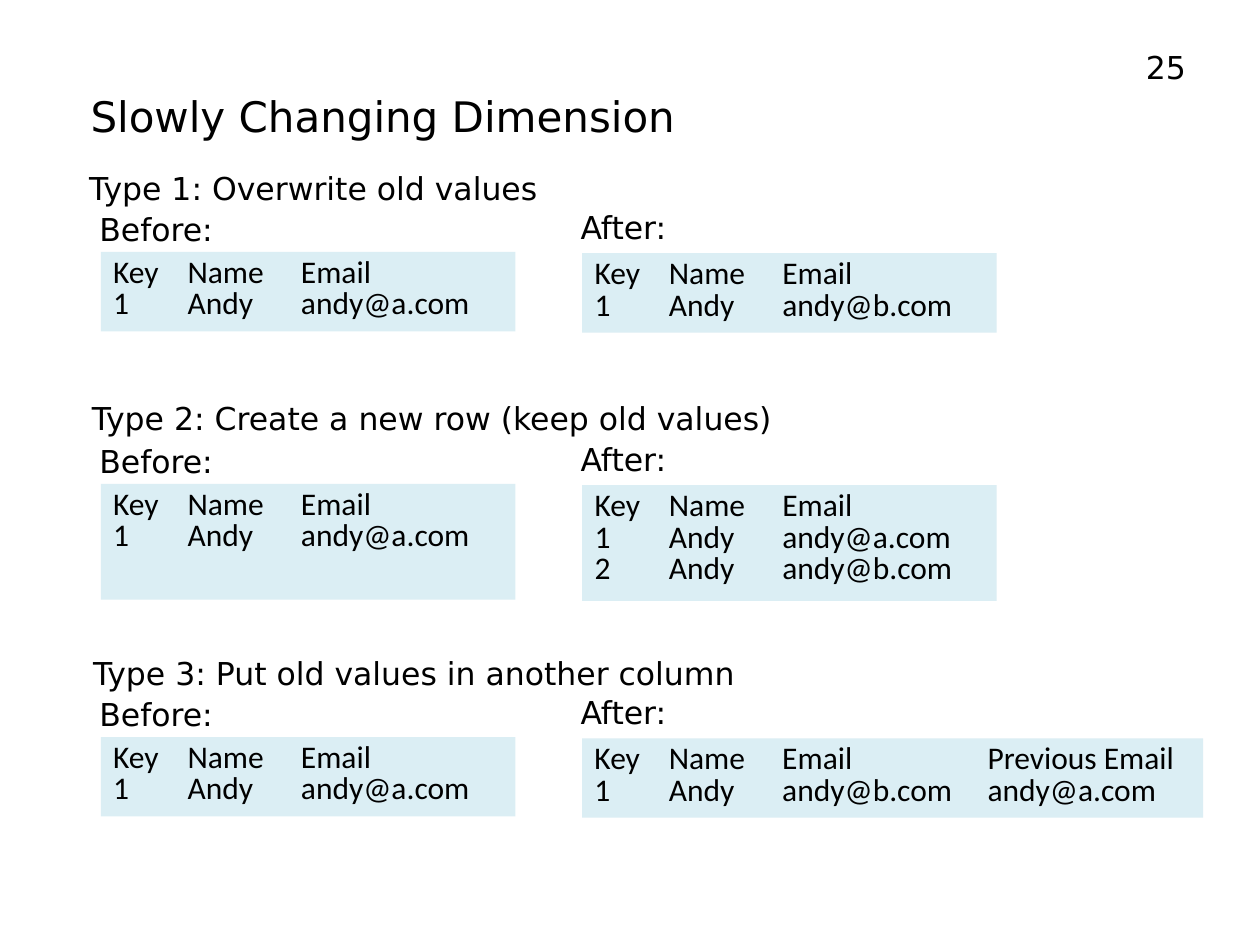
from pptx import Presentation
from pptx.dml.color import RGBColor
from pptx.enum.shapes import MSO_SHAPE
from pptx.enum.text import MSO_ANCHOR, PP_ALIGN
from pptx.oxml.ns import qn
from pptx.util import Inches, Pt
from lxml import etree

RECT = MSO_SHAPE.RECTANGLE
TOP, MIDDLE = MSO_ANCHOR.TOP, MSO_ANCHOR.MIDDLE
LEFT, RIGHT = PP_ALIGN.LEFT, PP_ALIGN.RIGHT
BLACK = RGBColor(0, 0, 0)
PALE = RGBColor(0xDB, 0xEE, 0xF4)
STOPS = (0.59, 1.49, 3.12)

prs = Presentation()
prs.slide_width, prs.slide_height = Inches(10), Inches(7.5)
slide = prs.slides.add_slide(prs.slide_layouts[6])


def add_text(text, x, y, w, h=0.4, size=18):
    box = slide.shapes.add_textbox(Inches(x), Inches(y), Inches(w), Inches(h))
    frame = box.text_frame
    frame.word_wrap = True
    frame.text = text
    font = frame.paragraphs[0].runs[0].font
    font.name, font.size, font.color.rgb = "DejaVu Sans", Pt(size), BLACK
    return frame


def add_panel(rows, x, y, w, h):
    panel = slide.shapes.add_shape(RECT, Inches(x), Inches(y), Inches(w), Inches(h))
    panel.shadow.inherit = False
    panel.fill.solid()
    panel.fill.fore_color.rgb = PALE
    panel.line.fill.background()
    frame = panel.text_frame
    frame.vertical_anchor = TOP
    frame.text = "\n".join("\t".join(row) for row in rows)
    for para in frame.paragraphs:
        para.alignment = LEFT
        para.line_spacing = Pt(18)
        # Tab stops line up the columns
        tabs = etree.SubElement(para._p.get_or_add_pPr(), qn("a:tabLst"))
        for stop in STOPS:
            etree.SubElement(tabs, qn("a:tab"), pos=str(Inches(stop)), algn="l")
        for run in para.runs:
            font = run.font
            font.name, font.size, font.color.rgb = "Calibri", Pt(18), BLACK


# Title and page number
title = add_text("Slowly Changing Dimension", 0.62, 0.47, 5.88, 0.72, 24)
title.paragraphs[0].line_spacing = 1.5
page = add_text("25", 8.7, 0.33, 0.81)
page.vertical_anchor = MIDDLE
page.paragraphs[0].alignment = RIGHT

# Records shown in the panels
HEAD = ("Key", "Name", "Email")
OLD = ("1", "Andy", "andy@a.com")
NEW = ("1", "Andy", "andy@b.com")
ADDED = ("2", "Andy", "andy@b.com")

# Heading, heading place, label top, panel height, after width, after rows
types = [
    ("Type 1: Overwrite old values", 0.61, 1.29, 1.62, 0.63, 3.29,
     [HEAD, NEW]),
    ("Type 2: Create a new row (keep old values)", 0.63, 3.12, 3.46, 0.92, 3.29,
     [HEAD, OLD, ADDED]),
    ("Type 3: Put old values in another column", 0.64, 5.14, 5.47, 0.63, 4.93,
     [HEAD + ("Previous Email",), NEW + ("andy@a.com",)]),
]

# One band per type: heading, then before and after
for heading, x, y, top, height, width, after in types:
    add_text(heading, x, y, 7.55)
    add_panel([HEAD, OLD], 0.8, top + 0.38, 3.29, height)
    add_panel(after, 4.62, top + 0.39, width, height)
    add_text("Before:", 0.69, top, 1.14)
    add_text("After:", 4.51, top - 0.02, 0.93)

prs.save("out.pptx")
